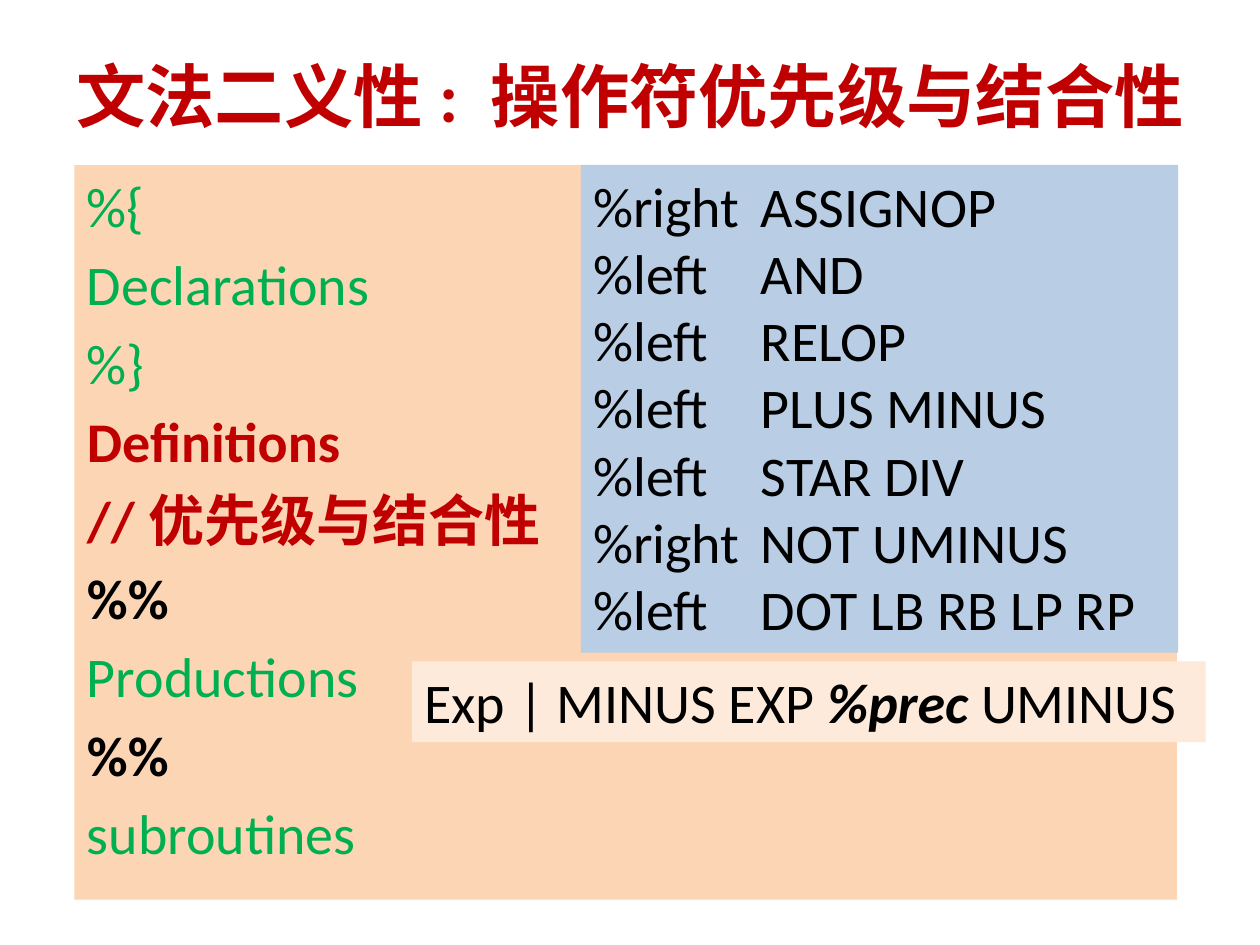
from pptx import Presentation
from pptx.dml.color import RGBColor
from pptx.enum.shapes import MSO_SHAPE
from pptx.enum.text import MSO_ANCHOR, MSO_AUTO_SIZE, PP_ALIGN
from pptx.oxml.ns import qn
from pptx.util import Inches, Pt
from lxml.etree import SubElement

RED = RGBColor(0xC0, 0x00, 0x00)
GREEN = RGBColor(0x00, 0xB0, 0x50)
BLACK = RGBColor(0x00, 0x00, 0x00)
PEACH = RGBColor(0xFC, 0xD5, 0xB5)
BLUE = RGBColor(0xB9, 0xCD, 0xE5)
CREAM = RGBColor(0xFD, 0xEA, 0xDA)


class Deck:
    font = "Calibri"
    size = 32

    def __init__(self):
        self.prs = Presentation()
        self.prs.slide_width = Inches(10)
        self.prs.slide_height = Inches(7.5)
        self.slide = self.prs.slides.add_slide(self.prs.slide_layouts[1])

    def place(self, shape, box):
        shape.left, shape.top, shape.width, shape.height = map(Inches, box)

    def paint(self, shape, color):
        shape.fill.solid()
        shape.fill.fore_color.rgb = color

    def run(self, para, text, color=BLACK, bold=False, slant=False, size=size):
        run = para.add_run()
        run.text = text
        font = run.font
        font.name, font.size = self.font, Pt(size)
        font.bold, font.italic = bold, slant
        font.color.rgb = color

    def lines(self, frame, count):
        for _ in range(count - 1):
            frame.add_paragraph()
        return frame.paragraphs

    def title(self, text, box):
        shape = self.slide.shapes.title
        self.place(shape, box)
        frame = shape.text_frame
        frame.vertical_anchor = MSO_ANCHOR.MIDDLE
        para = frame.paragraphs[0]
        para.alignment = PP_ALIGN.CENTER
        self.run(para, text, RED, True, size=39.6)

    def body(self, rows, box, fill):
        shape = self.slide.placeholders[1]
        self.place(shape, box)
        self.paint(shape, fill)
        frame = shape.text_frame
        frame.auto_size = MSO_AUTO_SIZE.NONE
        for para, row in zip(self.lines(frame, len(rows)), rows):
            para.space_before = Pt(6.4)
            props = para._p.get_or_add_pPr()
            props.set("marL", "0")
            props.set("indent", "0")
            SubElement(props, qn("a:buNone"))
            self.run(para, *row)

    def panel(self, rows, box, fill, stop=None):
        shape = self.slide.shapes.add_shape(MSO_SHAPE.RECTANGLE, *map(Inches, box))
        shape.shadow.inherit = False
        self.paint(shape, fill)
        shape.line.fill.background()
        frame = shape.text_frame
        frame.word_wrap = True
        frame.vertical_anchor = MSO_ANCHOR.TOP
        frame.auto_size = MSO_AUTO_SIZE.SHAPE_TO_FIT_TEXT
        for para, row in zip(self.lines(frame, len(rows)), rows):
            para.alignment = PP_ALIGN.LEFT
            if stop:
                tabs = SubElement(para._p.get_or_add_pPr(), qn("a:tabLst"))
                SubElement(tabs, qn("a:tab"), pos=str(Inches(stop)), algn="l")
            for part in row:
                self.run(para, *part)


def main():
    deck = Deck()
    deck.title("文法二义性: 操作符优先级与结合性", (0.5, 0.13, 9, 1.25))
    deck.body([
        ("%{", GREEN),
        ("Declarations", GREEN),
        ("%}", GREEN),
        ("Definitions", RED, True),
        ("//优先级与结合性", RED, True),
        ("%%", BLACK, True),
        ("Productions", GREEN),
        ("%%", BLACK, True),
        ("subroutines", GREEN),
    ], (0.59, 1.31, 8.75, 5.83), PEACH)
    ranks = [
        ("right", "ASSIGNOP"),
        ("left", "AND"),
        ("left", "RELOP"),
        ("left", "PLUS MINUS"),
        ("left", "STAR DIV"),
        ("right", "NOT UMINUS"),
        ("left", "DOT LB RB LP RP"),
    ]
    deck.panel([[(f"%{side}\t{names}",)] for side, names in ranks],
               (4.61, 1.31, 4.74, 3.87), BLUE, 1.33)
    deck.panel([[("Exp | MINUS EXP ",), ("%prec ", BLACK, True, True), ("UMINUS",)]],
               (3.27, 5.25, 6.3, 0.64), CREAM)
    deck.prs.save("out.pptx")


if __name__ == "__main__":
    main()
